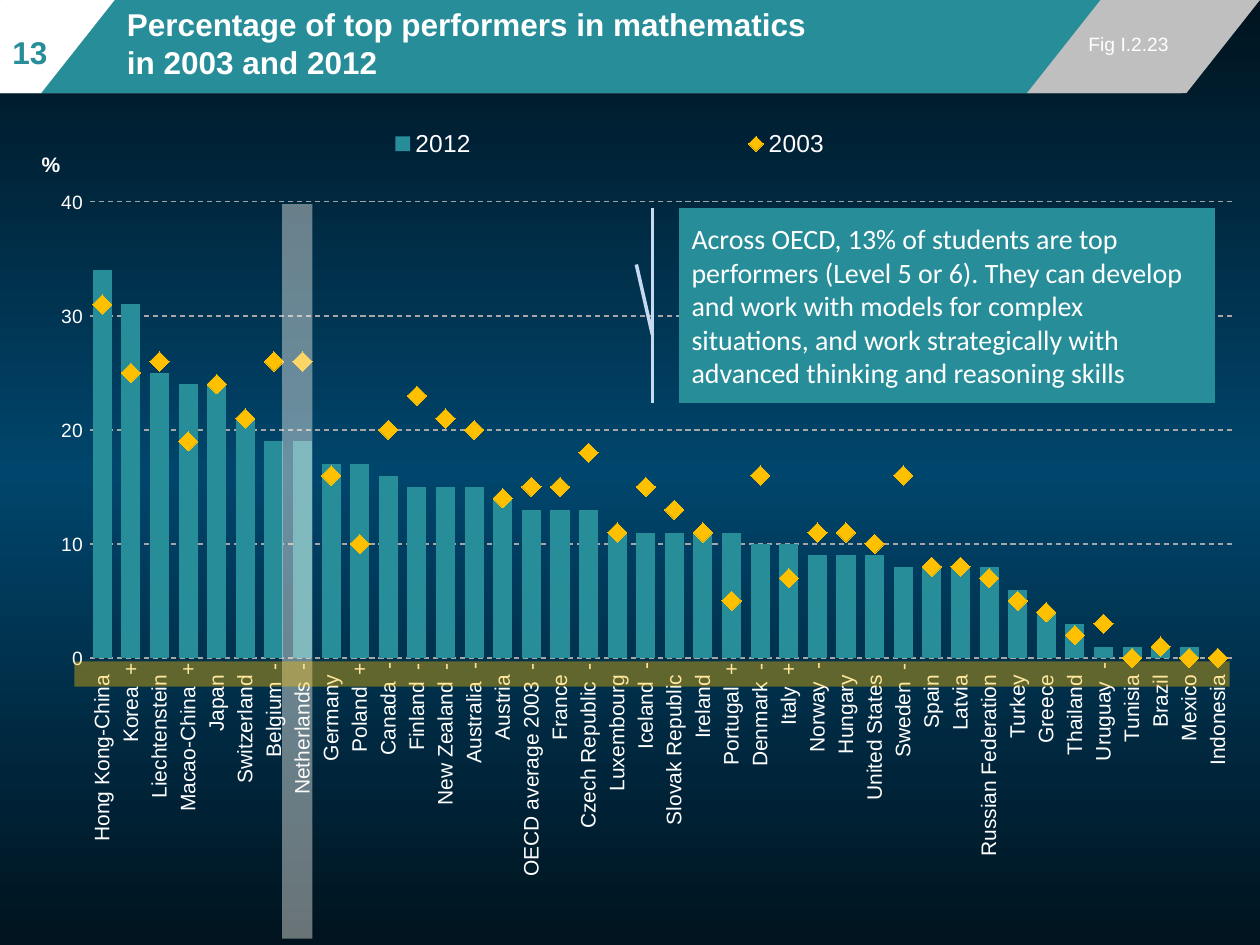
from copy import deepcopy
from lxml.etree import SubElement
from pptx import Presentation
from pptx.chart.data import CategoryChartData
from pptx.dml.color import RGBColor
from pptx.enum.chart import XL_CHART_TYPE, XL_LEGEND_POSITION, XL_MARKER_STYLE, XL_TICK_MARK
from pptx.enum.dml import MSO_LINE
from pptx.enum.shapes import MSO_SHAPE
from pptx.enum.text import MSO_ANCHOR, PP_ALIGN
from pptx.oxml import parse_xml
from pptx.oxml.ns import nsdecls, qn
from pptx.util import Inches, Pt

WHITE = RGBColor(0xFF, 0xFF, 0xFF)
TEAL = RGBColor(0x27, 0x8D, 0x99)
GRAY = RGBColor(0xBF, 0xBF, 0xBF)
GRID = RGBColor(0xA6, 0xA6, 0xA6)
GOLD = RGBColor(0xFF, 0xC0, 0x00)
CREAM = RGBColor(0xF5, 0xF4, 0xED)
PALE_BLUE = RGBColor(0xC6, 0xD9, 0xF1)
NIGHT = RGBColor(0x00, 0x13, 0x1E)
NAVY = RGBColor(0x00, 0x45, 0x6C)

TITLE = ["Percentage of top performers in mathematics ", "in 2003 and 2012"]
MESSAGE = ("Across OECD, 13% of students are top performers (Level 5 or 6). "
           "They can develop and work with models for complex situations, and work "
           "strategically with advanced thinking and reasoning skills")
BANNER = [(-0.2, 10.16, WHITE), (-0.59, 9.37, TEAL), (-0.58, 1.49, WHITE), (8.15, 1.85, GRAY)]
PERFORMERS = [
    ("Hong Kong-China", "", 34, 31), ("Korea", "+", 31, 25),
    ("Liechtenstein", "", 25, 26), ("Macao-China", "+", 24, 19),
    ("Japan", "", 24, 24), ("Switzerland", "", 21, 21),
    ("Belgium", "-", 19, 26), ("Netherlands", "-", 19, 26),
    ("Germany", "", 17, 16), ("Poland", "+", 17, 10),
    ("Canada", "-", 16, 20), ("Finland", "-", 15, 23),
    ("New Zealand", "-", 15, 21), ("Australia", "-", 15, 20),
    ("Austria", "", 14, 14), ("OECD average 2003", "-", 13, 15),
    ("France", "", 13, 15), ("Czech Republic", "-", 13, 18),
    ("Luxembourg", "", 11, 11), ("Iceland", "-", 11, 15),
    ("Slovak Republic", "", 11, 13), ("Ireland", "", 11, 11),
    ("Portugal", "+", 11, 5), ("Denmark", "-", 10, 16),
    ("Italy", "+", 10, 7), ("Norway", "-", 9, 11),
    ("Hungary", "", 9, 11), ("United States", "", 9, 10),
    ("Sweden", "-", 8, 16), ("Spain", "", 8, 8),
    ("Latvia", "", 8, 8), ("Russian Federation", "", 8, 7),
    ("Turkey", "", 6, 5), ("Greece", "", 4, 4),
    ("Thailand", "", 3, 2), ("Uruguay", "-", 1, 3),
    ("Tunisia", "", 1, 0), ("Brazil", "", 1, 1),
    ("Mexico", "", 1, 0), ("Indonesia", "", 0, 0),
]


def set_font(font, size, name="Arial", color=WHITE, bold=False):
    font.size = Pt(size)
    font.name = name
    font.bold = bold
    font.color.rgb = color


def write(shape, lines, anchor=MSO_ANCHOR.TOP, **style):
    frame = shape.text_frame
    frame.word_wrap = True
    frame.vertical_anchor = anchor
    paragraph = frame.paragraphs[0]
    paragraph.alignment = PP_ALIGN.LEFT
    for index, line in enumerate(lines):
        if index:
            paragraph.add_line_break()
        run = paragraph.add_run()
        run.text = line
        set_font(run.font, **style)


def add_text(slide, box, lines, **style):
    write(slide.shapes.add_textbox(*map(Inches, box)), lines, **style)


def add_block(slide, kind, box, color, opacity=None):
    shape = slide.shapes.add_shape(kind, *map(Inches, box))
    shape.shadow.inherit = False
    shape.fill.solid()
    shape.fill.fore_color.rgb = color
    shape.line.fill.background()
    if opacity:
        color_node = shape.fill._xPr.find(".//" + qn("a:srgbClr"))
        SubElement(color_node, qn("a:alpha")).set("val", str(opacity * 1000))
    return shape


def set_background(slide):
    fill = slide.background.fill
    fill.gradient()
    fill.gradient_angle = 270
    stops = slide._element.find(".//" + qn("a:gsLst"))
    stops.insert(1, deepcopy(stops[0]))
    for stop, position, color in zip(fill.gradient_stops, (0, 0.5, 1), (NIGHT, NAVY, NIGHT)):
        stop.position = position
        stop.color.rgb = color


def place(element, index, **fractions):
    for old in element.findall(qn("c:layout")):
        element.remove(old)
    layout = parse_xml(f"<c:layout {nsdecls('c')}><c:manualLayout/></c:layout>")
    for key, value in fractions.items():
        SubElement(layout[0], qn("c:" + key)).set("val", str(value))
    element.insert(index, layout)


def move_last_series_to_line(chart):
    bar = chart._chartSpace.find(".//" + qn("c:barChart"))
    series = bar.findall(qn("c:ser"))[-1]
    for node in series.findall(qn("c:invertIfNegative")):
        series.remove(node)
    line = parse_xml(f'<c:lineChart {nsdecls("c")}><c:grouping val="standard"/>'
                     '<c:varyColors val="0"/><c:marker val="1"/></c:lineChart>')
    line.insert(2, series)
    for axis_id in bar.findall(qn("c:axId")):
        line.append(deepcopy(axis_id))
    bar.addnext(line)


def style_axes(chart):
    for axis, size in ((chart.category_axis, 12), (chart.value_axis, 11)):
        axis.major_tick_mark = axis.minor_tick_mark = XL_TICK_MARK.NONE
        axis.format.line.fill.background()
        set_font(axis.tick_labels.font, size)
    chart.category_axis.has_major_gridlines = False
    chart.category_axis._element.find(".//" + qn("a:bodyPr")).set("rot", "-5400000")
    axis = chart.value_axis
    axis.minimum_scale, axis.maximum_scale, axis.major_unit = 0, 40, 10
    axis.tick_labels.number_format = "General"
    axis.tick_labels.number_format_is_linked = False
    grid = axis.major_gridlines.format.line
    grid.color.rgb = GRID
    grid.width = Pt(0.75)
    grid.dash_style = MSO_LINE.DASH
    run = axis.axis_title.text_frame.paragraphs[0].add_run()
    run.text = "%"
    set_font(run.font, 12, bold=True)
    title = axis.axis_title._element
    title.find(".//" + qn("a:bodyPr")).set("rot", "0")
    place(title, 1, xMode="edge", yMode="edge", x=0.03, y=0.07)


def add_performers_chart(slide):
    data = CategoryChartData(number_format="0")
    names, signs, latest, earlier = zip(*PERFORMERS)
    data.categories = [f"{name}  {sign}" for name, sign in zip(names, signs)]
    data.add_series("2012", latest)
    data.add_series("2003", earlier)
    box = map(Inches, (0, 0.68, 9.98, 7.1))
    chart = slide.shapes.add_chart(XL_CHART_TYPE.COLUMN_CLUSTERED, *box, data).chart
    set_font(chart.font, 24.8, "Comic Neue", RGBColor(0, 0, 0), True)
    chart.has_title = False
    move_last_series_to_line(chart)
    columns, markers = chart.plots
    columns.gap_width = 50
    columns.vary_by_categories = False
    columns.series[0].format.fill.solid()
    columns.series[0].format.fill.fore_color.rgb = TEAL
    series = markers.series[0]
    series.smooth = False
    series.format.line.fill.background()
    series.marker.style = XL_MARKER_STYLE.DIAMOND
    series.marker.size = 11
    series.marker.format.fill.solid()
    series.marker.format.fill.fore_color.rgb = GOLD
    series.marker.format.line.fill.background()
    style_axes(chart)
    chart.has_legend = True
    chart.legend.position = XL_LEGEND_POSITION.RIGHT
    chart.legend.include_in_layout = False
    set_font(chart.legend.font, 14)
    place(chart.legend._element, 1, xMode="edge", yMode="edge", x=0.1, y=0.04, w=0.77, h=0.05)
    place(chart._chartSpace.find(".//" + qn("c:plotArea")), 0, layoutTarget="inner",
          xMode="edge", yMode="edge", x=0.07, y=0.13, w=0.91, h=0.51)


def main():
    presentation = Presentation()
    presentation.slide_width = Inches(10)
    presentation.slide_height = Inches(7.5)
    slide = presentation.slides.add_slide(presentation.slide_layouts[6])
    set_background(slide)
    for left, width, color in BANNER:
        band = add_block(slide, MSO_SHAPE.PARALLELOGRAM, (left, 0, width, 0.74), color)
        band.adjustments[0] = 0.79
    add_performers_chart(slide)
    add_text(slide, (0.91, 0, 7.17, 0.68), TITLE, anchor=MSO_ANCHOR.MIDDLE, size=18, bold=True)
    add_block(slide, MSO_SHAPE.RECTANGLE, (2.24, 1.62, 0.24, 5.83), CREAM, 43)
    add_block(slide, MSO_SHAPE.RECTANGLE, (0.59, 5.25, 9.17, 0.2), GOLD, 38)
    add_text(slide, (8.54, 0.21, 1.1, 0.4), ["Fig I.2.23"], size=11)
    add_text(slide, (0, 0.21, 0.75, 0.4), ["13"], size=18, color=TEAL, bold=True)
    callout = add_block(slide, MSO_SHAPE.LINE_CALLOUT_1_ACCENT_BAR, (5.39, 1.65, 4.25, 1.55), TEAL)
    for index, value in enumerate((0.65, -0.05, 0.29, -0.08)):
        callout.adjustments[index] = value
    callout.line.color.rgb = PALE_BLUE
    callout.line.width = Pt(2)
    write(callout, [MESSAGE], anchor=MSO_ANCHOR.MIDDLE, size=16, name="Calibri")
    presentation.save("out.pptx")


if __name__ == "__main__":
    main()
